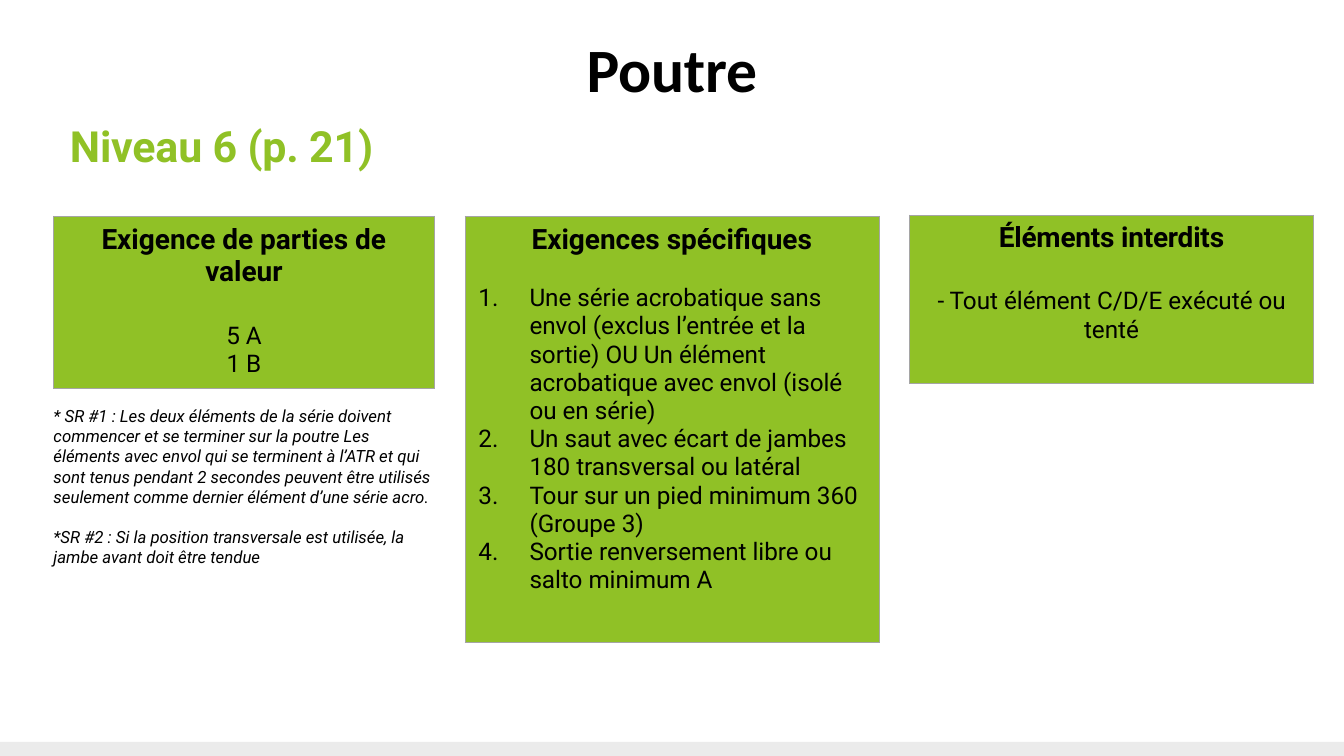
import pptx
import pptx.util
import pptx.dml.color
import pptx.enum.shapes
import pptx.enum.text
import pptx.oxml
import pptx.oxml.ns

Inches = pptx.util.Inches
Pt = pptx.util.Pt
RGBColor = pptx.dml.color.RGBColor
Align = pptx.enum.text.PP_ALIGN

GREEN = RGBColor(0x90, 0xC1, 0x26)
BLACK = RGBColor(0, 0, 0)
GREY = RGBColor(0xEB, 0xEB, 0xEB)
EDGE = RGBColor(0xA5, 0xA5, 0xA5)

# Content
TITLE = "Poutre"
LEVEL = "Niveau 6 (p. 21)"
# box: left, top, width, height; gap is the space under the heading
CARDS = [
    dict(box=(0.4, 1.61, 2.83, 1.28), head="Exigence de parties de valeur",
         gap=17.6, items=["5 A", "1 B"]),
    dict(box=(3.46, 1.61, 3.08, 3.17), head="Exigences spécifiques",
         gap=15.2, listed=True, items=[
             "Une série acrobatique sans envol (exclus l’entrée et la sortie) "
             "OU Un élément acrobatique avec envol (isolé ou en série)",
             "Un saut avec écart de jambes 180 transversal ou latéral",
             "Tour sur un pied minimum 360 (Groupe 3)",
             "Sortie renversement libre ou salto minimum A"]),
    dict(box=(6.77, 1.6, 3, 1.25), head="Éléments interdits",
         gap=17.6, track=-0.1, items=["- Tout élément C/D/E exécuté ou tenté"]),
]
NOTES = [
    "* SR #1 : Les deux éléments de la série doivent commencer et se terminer "
    "sur la poutre Les éléments avec envol qui se terminent à l’ATR et qui "
    "sont tenus pendant 2 secondes peuvent être utilisés seulement comme "
    "dernier élément d’une série acro.",
    "*SR #2 : Si la position transversale est utilisée, la jambe avant doit "
    "être tendue",
]


def write(frame, text, size=13, font="Roboto", color=BLACK, bold=False,
          italic=False, align=Align.LEFT, before=0, track=0, listed=False):
    """Add one paragraph, filling the empty first one when there is one."""
    para = frame.paragraphs[0]
    if para.runs:
        para = frame.add_paragraph()
    para.alignment = align
    para.space_before = Pt(before)
    run = para.add_run()
    run.text = text
    run.font.size = Pt(size)
    run.font.name = font
    run.font.color.rgb = color
    run.font.bold = bold
    run.font.italic = italic
    if track:
        run.font._element.set("spc", str(round(track * 100)))
    if listed:
        props = para._p.get_or_add_pPr()
        props.set("marL", str(Inches(0.38)))
        props.set("indent", str(-Inches(0.38)))
        props.append(pptx.oxml.parse_xml(
            f'<a:buAutoNum {pptx.oxml.ns.nsdecls("a")} type="arabicPeriod"/>'))


def add_box(slide, box, inset=True):
    frame = slide.shapes.add_textbox(*map(Inches, box)).text_frame
    frame.word_wrap = True
    if not inset:
        frame.margin_left = frame.margin_right = 0
        frame.margin_top = frame.margin_bottom = 0
    return frame


def add_card(slide, box, head, gap, items, listed=False, track=0):
    table = slide.shapes.add_table(1, 1, *map(Inches, box)).table
    table.first_row = table.horz_banding = False
    cell = table.cell(0, 0)
    props = cell._tc.get_or_add_tcPr()
    for side in "LRTB":
        props.append(pptx.oxml.parse_xml(
            f'<a:ln{side} {pptx.oxml.ns.nsdecls("a")} w="{Pt(0.5)}">'
            f'<a:solidFill><a:srgbClr val="{EDGE}"/></a:solidFill></a:ln{side}>'))
    cell.fill.solid()
    cell.fill.fore_color.rgb = GREEN
    frame = cell.text_frame
    write(frame, head, size=15, bold=True, align=Align.CENTER, track=track)
    for i, item in enumerate(items):
        write(frame, item, before=0 if i else gap, listed=listed,
              align=Align.LEFT if listed else Align.CENTER)


# 16:9 page
deck = pptx.Presentation()
deck.slide_width = Inches(10)
deck.slide_height = Inches(10) * 9 // 16
slide = deck.slides.add_slide(deck.slide_layouts[6])

# Bottom band
band = slide.shapes.add_shape(pptx.enum.shapes.MSO_SHAPE.RECTANGLE,
                              0, Inches(5.52), deck.slide_width,
                              deck.slide_height - Inches(5.52))
band.shadow.inherit = False
band.fill.solid()
band.fill.fore_color.rgb = GREY
band.line.fill.background()

# Title and level
frame = add_box(slide, (0.4, 0.28, 9.2, 0.45), inset=False)
frame.vertical_anchor = pptx.enum.text.MSO_ANCHOR.MIDDLE
write(frame, TITLE, size=33, font="Calibri", bold=True, align=Align.CENTER,
      track=-0.1)
frame = add_box(slide, (0.52, 0.89, 9.28, 0.39), inset=False)
write(frame, LEVEL, size=23, color=GREEN, bold=True, track=-0.1)

# Requirement cards
for card in CARDS:
    add_card(slide, **card)

# Notes under the first card
frame = add_box(slide, (0.3, 2.97, 3.04, 1.46))
for i, note in enumerate(NOTES):
    write(frame, note, size=9, italic=True, before=10.6 * i)

deck.save("out.pptx")
